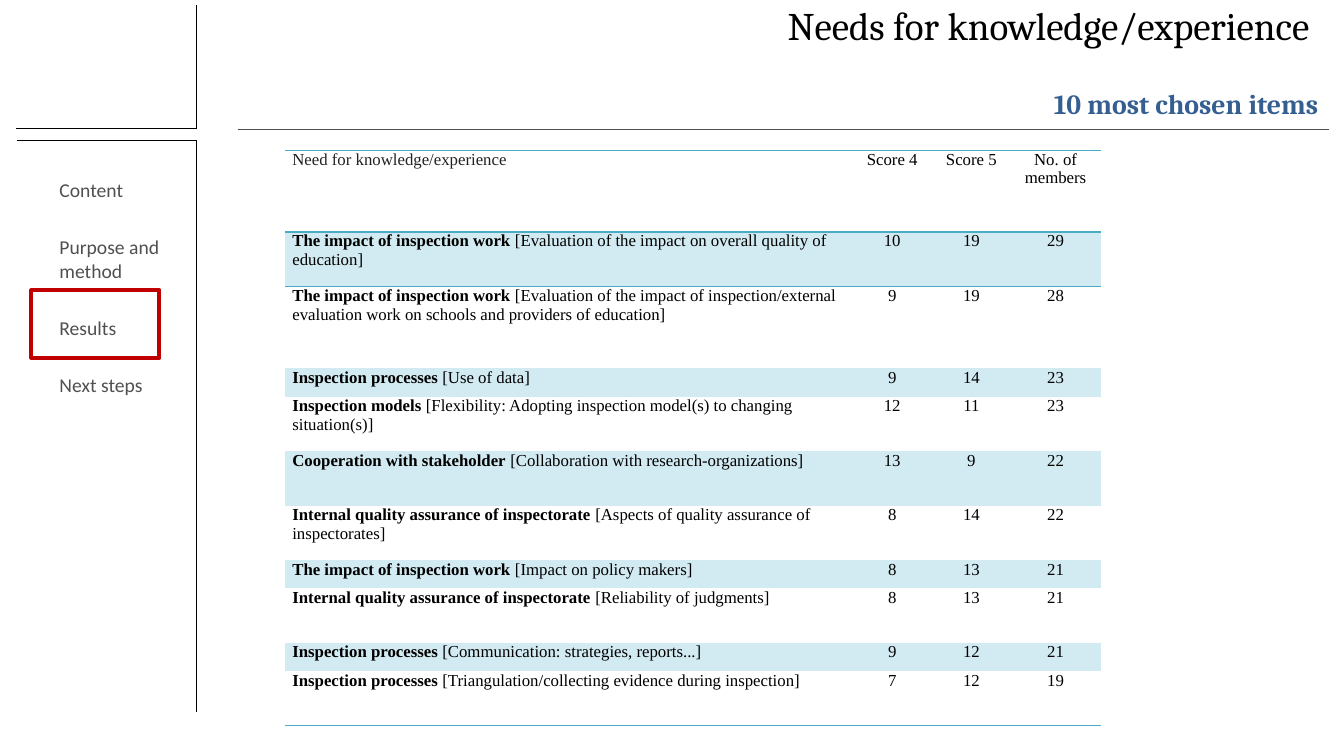
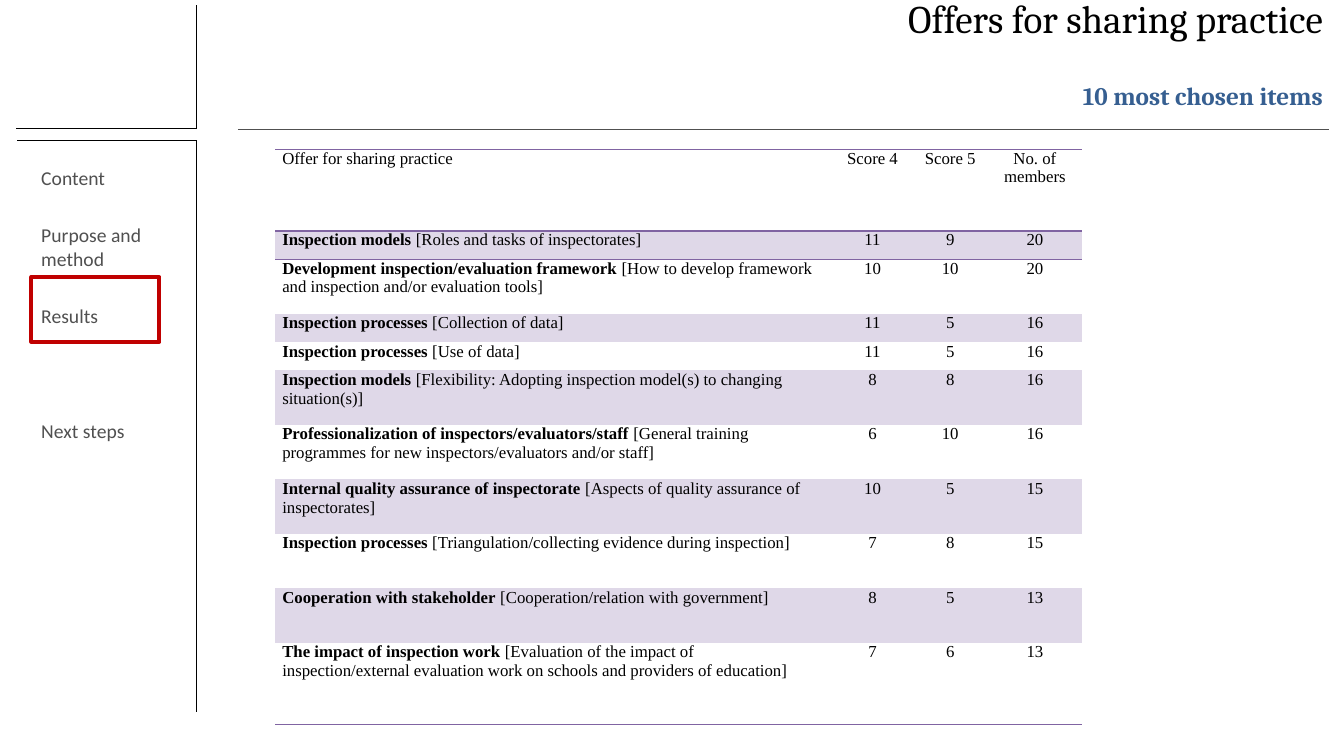
from lxml import etree
from pptx import Presentation
from pptx.dml.color import RGBColor
from pptx.enum.shapes import MSO_CONNECTOR, MSO_SHAPE
from pptx.enum.text import MSO_ANCHOR, PP_ALIGN
from pptx.oxml.ns import qn
from pptx.util import Emu, Inches, Pt

STRAIGHT = MSO_CONNECTOR.STRAIGHT
RECTANGLE = MSO_SHAPE.RECTANGLE
TOP = MSO_ANCHOR.TOP
LEFT, CENTER, RIGHT = PP_ALIGN.LEFT, PP_ALIGN.CENTER, PP_ALIGN.RIGHT

TITLE_FONT, MENU_FONT, TABLE_FONT = "Cambria", "Calibri", "Times New Roman"
BLACK, GREY, BLUE, RED = "000000", "505050", "365F91", "C00000"
NO_TABLE_STYLE = "{2D5ABB26-0587-4C30-8999-92F81FD0307C}"

FRAME_LINES = [
    (14.63, 18.53, 14.63, 94.13, BLACK),
    (1.28, 18.53, 14.63, 18.53, BLACK),
    (1.2, 16.93, 14.63, 16.93, BLACK),
    (14.63, 0.67, 14.63, 17.07, BLACK),
    (17.7, 17.07, 98.87, 17.07, GREY),
]
ROW_HEIGHTS = {1: 3.75, 2: 7.21, 3: 10.82}
HEADER_LINES = 3
MENU = ["Content", "Purpose and method", "Results", "Next steps"]

IMPACT = "The impact of inspection work"
PROCESSES = "Inspection processes"
MODELS = "Inspection models"
COOPERATION = "Cooperation with stakeholder"
QUALITY = "Internal quality assurance of inspectorate"

NEEDS = [
    (2, IMPACT, "Evaluation of the impact on overall quality of education", 10, 19),
    (3, IMPACT, "Evaluation of the impact of inspection/external evaluation work "
                "on schools and providers of education", 9, 19),
    (1, PROCESSES, "Use of data", 9, 14),
    (2, MODELS, "Flexibility: Adopting inspection model(s) to changing situation(s)", 12, 11),
    (2, COOPERATION, "Collaboration with research-organizations", 13, 9),
    (2, QUALITY, "Aspects of quality assurance of inspectorates", 8, 14),
    (1, IMPACT, "Impact on policy makers", 8, 13),
    (2, QUALITY, "Reliability of judgments", 8, 13),
    (1, PROCESSES, "Communication: strategies, reports...", 9, 12),
    (2, PROCESSES, "Triangulation/collecting evidence during inspection", 7, 12),
]
OFFERS = [
    (1, MODELS, "Roles and tasks of inspectorates", 11, 9),
    (2, "Development inspection/evaluation framework",
     "How to develop framework and inspection and/or evaluation tools", 10, 10),
    (1, PROCESSES, "Collection of data", 11, 5),
    (1, PROCESSES, "Use of data", 11, 5),
    (2, MODELS, "Flexibility: Adopting inspection model(s) to changing situation(s)", 8, 8),
    (2, "Professionalization of inspectors/evaluators/staff",
     "General training programmes for new inspectors/evaluators and/or staff", 6, 10),
    (2, QUALITY, "Aspects of quality assurance of inspectorates", 10, 5),
    (2, PROCESSES, "Triangulation/collecting evidence during inspection", 7, 8),
    (2, COOPERATION, "Cooperation/relation with government", 8, 5),
    (3, IMPACT, "Evaluation of the impact of inspection/external evaluation work "
                "on schools and providers of education", 7, 6),
]


def color(hex_code):
    """Turn a hex string into a colour."""
    return RGBColor.from_string(hex_code)


class Deck:
    """Hold the style and the current slide; lengths are percent of the slide."""

    def __init__(self):
        """Open an empty wide presentation."""
        self.presentation = Presentation()
        self.presentation.slide_width = Inches(13.33)
        self.presentation.slide_height = Inches(7.5)
        self.slide = None

    def x(self, share):
        """Convert a share of the slide width."""
        return Emu(round(self.presentation.slide_width * share / 100))

    def y(self, share):
        """Convert a share of the slide height."""
        return Emu(round(self.presentation.slide_height * share / 100))

    def box(self, left, top, width, height):
        """Convert a rectangle of shares."""
        return self.x(left), self.y(top), self.x(width), self.y(height)

    def add_slide(self):
        """Start a blank slide with the frame lines."""
        self.slide = self.presentation.slides.add_slide(self.presentation.slide_layouts[6])
        for frame_line in FRAME_LINES:
            self.line(*frame_line)

    def line(self, left, top, right, bottom, line_color):
        """Draw a thin straight line."""
        connector = self.slide.shapes.add_connector(
            STRAIGHT, self.x(left), self.y(top), self.x(right), self.y(bottom))
        connector.line.color.rgb = color(line_color)
        connector.line.width = Pt(0.5)
        etree.SubElement(connector.element.spPr, qn("a:effectLst"))

    def style(self, paragraph, font_name, size, text_color, align=LEFT):
        """Format every run of a paragraph."""
        paragraph.alignment = align
        for run in paragraph.runs:
            run.font.name = font_name
            run.font.size = Pt(size)
            run.font.color.rgb = color(text_color)

    def text_box(self, place, lines):
        """Add a wrapping text box with one paragraph per line."""
        text_frame = self.slide.shapes.add_textbox(*self.box(*place)).text_frame
        text_frame.word_wrap = True
        text_frame.vertical_anchor = TOP
        text_frame.text = "\n".join(lines)
        return text_frame

    def title(self, left, top, text, subtitle, subtitle_size):
        """Add the right-aligned title and its bold subtitle."""
        text_frame = self.text_box((left, top, 82.67, 16), [text, subtitle])
        text_frame.margin_top = 0
        heading, subheading = text_frame.paragraphs
        self.style(heading, TITLE_FONT, 27.9, BLACK, RIGHT)
        self.style(subheading, TITLE_FONT, subtitle_size, BLUE, RIGHT)
        subheading.runs[0].font.bold = True
        subheading.space_before = Pt(29.4)
        for paragraph in text_frame.paragraphs:
            paragraph.line_spacing = 0.9

    def menu(self, left, top, height, last_gap=12):
        """Add the section list at the left."""
        paragraphs = self.text_box((left, top, 10.05, height), MENU).paragraphs
        for paragraph in paragraphs:
            self.style(paragraph, MENU_FONT, 14, GREY)
            paragraph.space_after = Pt(12)
        for paragraph in paragraphs[1:]:
            paragraph.space_before = Pt(12)
        paragraphs[-1].space_before = Pt(last_gap)

    def marker(self, top, height):
        """Outline the current section."""
        shape = self.slide.shapes.add_shape(RECTANGLE, *self.box(2.33, top, 9.53, height))
        shape.shadow.inherit = False
        shape.fill.background()
        shape.line.color.rgb = color(RED)
        shape.line.width = Pt(3)

    def border(self, cell, edge, line_color):
        """Draw one edge of a cell, T or B."""
        properties = cell._tc.get_or_add_tcPr()
        line = etree.SubElement(properties, qn(f"a:ln{edge}"), w=str(Pt(1)))
        fill = etree.SubElement(line, qn("a:solidFill"))
        etree.SubElement(fill, qn("a:srgbClr"), val=line_color)

    def cell(self, cell, texts, align, text_color, edges, line_color, band):
        """Fill a cell; with two texts the first is bold."""
        cell.margin_left = cell.margin_right = Inches(0.07)
        cell.margin_top = cell.margin_bottom = 0
        paragraph = cell.text_frame.paragraphs[0]
        for text in texts:
            paragraph.add_run().text = text
        self.style(paragraph, TABLE_FONT, 12, text_color, align)
        paragraph.runs[0].font.bold = len(texts) > 1
        for edge in edges:
            self.border(cell, edge, line_color)
        if band:
            cell.fill.solid()
            cell.fill.fore_color.rgb = color(band)
        else:
            cell.fill.background()

    def score_table(self, left, top, widths, heading, items, line_color, band,
                    heading_color=BLACK):
        """Add the ranking; members are the sum of both scores."""
        heights = [ROW_HEIGHTS[lines] for lines in [HEADER_LINES] + [item[0] for item in items]]
        rows = [[[heading], ["Score 4"], ["Score 5"], ["No. of members"]]]
        for _, topic, detail, score_4, score_5 in items:
            scores = [[str(number)] for number in (score_4, score_5, score_4 + score_5)]
            rows.append([[topic, f" [{detail}]"]] + scores)
        frame = self.slide.shapes.add_table(
            len(rows), len(widths), *self.box(left, top, sum(widths), sum(heights)))
        table = frame.table
        table.first_row = table.horz_banding = False
        next(frame.element.iter(qn("a:tableStyleId"))).text = NO_TABLE_STYLE
        for column, width in zip(table.columns, widths):
            column.width = self.x(width)
        edges = {0: "TB", 1: "T", len(items): "B"}
        for row_index, (row, height) in enumerate(zip(rows, heights)):
            table.rows[row_index].height = self.y(height)
            for column_index, texts in enumerate(row):
                self.cell(
                    table.cell(row_index, column_index), texts,
                    CENTER if column_index else LEFT,
                    BLACK if row_index or column_index else heading_color,
                    edges.get(row_index, ""), line_color,
                    band if row_index % 2 else None)


def main():
    """Build and save both slides."""
    deck = Deck()
    subtitle = "10 most chosen items"

    deck.add_slide()
    deck.title(16.13, 0.9, "Needs for knowledge/experience ", subtitle, 19.8)
    deck.menu(3.68, 22.93, 38.13)
    deck.marker(38.4, 8.93)
    deck.score_table(21.23, 19.87, [42.16, 6, 5.78, 6.75], "Need for knowledge/experience",
                     NEEDS, "4BACC6", "D2EAF1", "222222")

    deck.add_slide()
    deck.title(16.5, 0, "Offers for sharing practice", subtitle, 18)
    deck.menu(2.33, 21.33, 45.73, last_gap=53)
    deck.marker(36.67, 8.53)
    deck.score_table(20.48, 19.73, [41.48, 5.93, 5.63, 6.98], "Offer for sharing practice",
                     OFFERS, "8064A2", "DFD8E8")

    deck.presentation.save("out.pptx")


if __name__ == "__main__":
    main()
